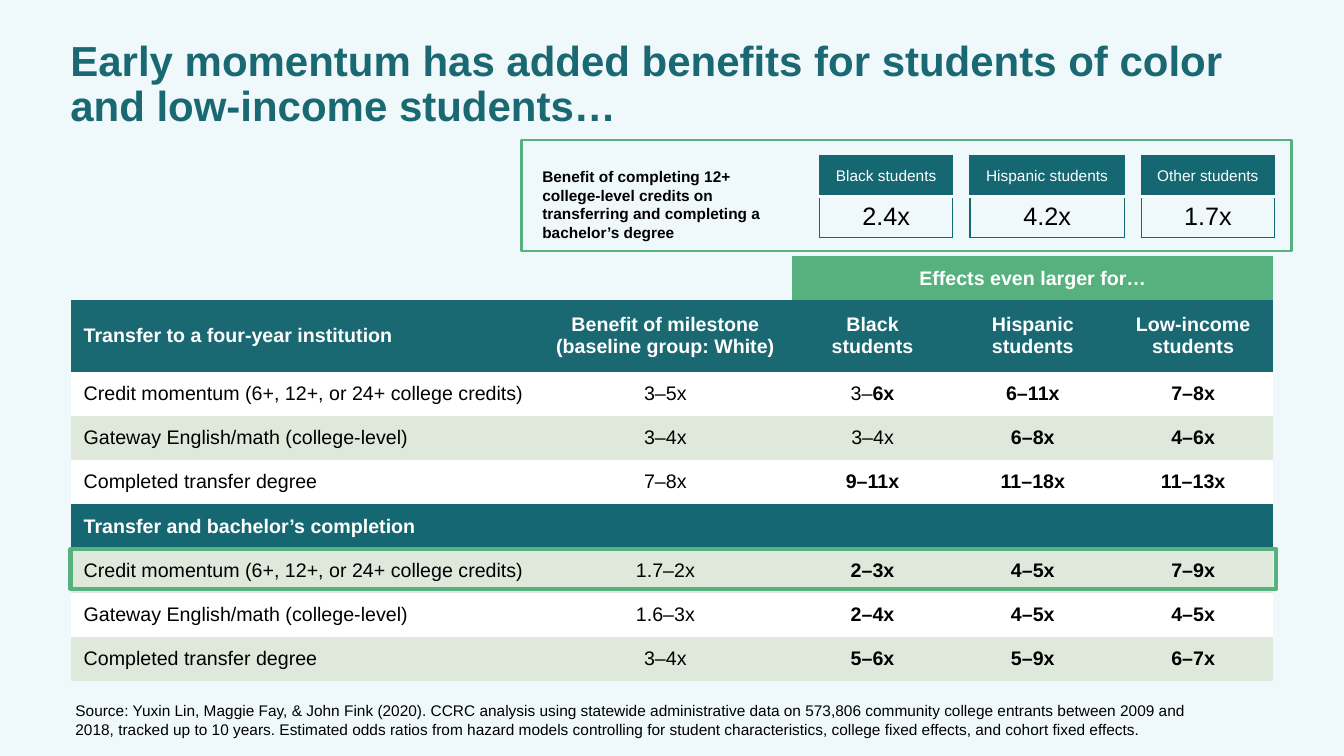
import pptx
import pptx.util
import pptx.dml.color
import pptx.enum.shapes
import pptx.enum.text
import pptx.oxml
from pptx.oxml.ns import nsdecls

Inches = pptx.util.Inches
Pt = pptx.util.Pt
RGBColor = pptx.dml.color.RGBColor
CENTER = pptx.enum.text.PP_ALIGN.CENTER
LEFT = pptx.enum.text.PP_ALIGN.LEFT
COLORS = {
    "background": "EFF8FA", "title": "196872", "teal": "156872", "green": "56B17E",
    "band": "DEE9DC", "white": "FFFFFF", "black": "000000",
}
PLAIN_TABLE_STYLE = "{2D5ABB26-0587-4C30-8999-92F81FD0307C}"


def write_text(frame, text, size=14, color="black", bold=False, align=LEFT, spacing=None):
    """Write one paragraph; everything after a "|" in the text is bold."""
    frame.word_wrap = True
    paragraph = frame.paragraphs[0]
    paragraph.alignment = align
    if spacing:
        paragraph.line_spacing = spacing
    for position, part in enumerate(text.split("|")):
        if part:
            run = paragraph.add_run()
            run.text = part
            run.font.name = "Arial"
            run.font.size = Pt(size)
            run.font.bold = bold or position > 0
            run.font.color.rgb = RGBColor.from_string(COLORS[color])


def add_plain_table(left, top, widths, heights):
    """Add a table without banding or grid, its cells anchored in the middle."""
    table = slide.shapes.add_table(
        len(heights), len(widths), Inches(left), Inches(top),
        Inches(sum(widths)), Inches(sum(heights))).table
    table.first_row = table.horz_banding = False
    table._tbl.tblPr[0].text = PLAIN_TABLE_STYLE
    for column, width in zip(table.columns, widths):
        column.width = Inches(width)
    for row, height in zip(table.rows, heights):
        row.height = Inches(height)
    for cell in table.iter_cells():
        cell.vertical_anchor = pptx.enum.text.MSO_ANCHOR.MIDDLE
    return table


presentation = pptx.Presentation()
presentation.slide_width = Inches(13.33)
presentation.slide_height = Inches(7.5)
slide = presentation.slides.add_slide(presentation.slide_layouts[6])
slide.background.fill.solid()
slide.background.fill.fore_color.rgb = RGBColor.from_string(COLORS["background"])

# Title, source line and the label of the callout
texts = [
    ((0.6, 0.35, 12.03, 1.45),
     "Early momentum has added benefits for students of color and low-income students…",
     dict(size=30, color="title", bold=True, spacing=0.9)),
    ((0.65, 6.91, 11.63, 0.47),
     "Source: Yuxin Lin, Maggie Fay, & John Fink (2020). CCRC analysis using statewide "
     "administrative data on 573,806 community college entrants between 2009 and 2018, "
     "tracked up to 10 years. Estimated odds ratios from hazard models controlling for "
     "student characteristics, college fixed effects, and cohort fixed effects.",
     dict(size=11)),
    ((5.28, 1.61, 2.68, 0.66),
     "Benefit of completing 12+ college-level credits on transferring and completing "
     "a bachelor’s degree",
     dict(size=11, bold=True)),
]
for place, text, text_format in texts:
    text_box = slide.shapes.add_textbox(*map(Inches, place))
    write_text(text_box.text_frame, text, **text_format)

# Main table: kind of row, then its cells
effects_rows = [
    ("effects", ["", "", "Effects even larger for…", "", ""]),
    ("header", ["Transfer to a four-year institution",
                "Benefit of milestone (baseline group: White)",
                "Black students", "Hispanic students", "Low-income students"]),
    ("white", ["Credit momentum (6+, 12+, or 24+ college credits)",
               "3–5x", "3–|6x", "|6–11x", "|7–8x"]),
    ("band", ["Gateway English/math (college-level)", "3–4x", "3–4x", "|6–8x", "|4–6x"]),
    ("white", ["Completed transfer degree", "7–8x", "|9–11x", "|11–18x", "|11–13x"]),
    ("section", ["Transfer and bachelor’s completion", "", "", "", ""]),
    ("band", ["Credit momentum (6+, 12+, or 24+ college credits)",
              "1.7–2x", "|2–3x", "|4–5x", "|7–9x"]),
    ("white", ["Gateway English/math (college-level)", "1.6–3x", "|2–4x", "|4–5x", "|4–5x"]),
    ("band", ["Completed transfer degree", "3–4x", "|5–6x", "|5–9x", "|6–7x"]),
]
row_fills = {"effects": "green", "header": "title", "section": "teal",
             "white": "white", "band": "band"}
table_height, header_height = 4.21, 0.71
row_height = (table_height - header_height) / (len(effects_rows) - 1)
effects_table = add_plain_table(
    0.7, 2.54, [4.64, 2.52, 1.59, 1.59, 1.59],
    [header_height if kind == "header" else row_height for kind, _ in effects_rows])
effects_table.cell(0, 2).merge(effects_table.cell(0, 4))
for row, (kind, values) in enumerate(effects_rows):
    heading = kind in ("effects", "header", "section")
    for column, value in enumerate(values):
        cell = effects_table.cell(row, column)
        cell.margin_left = cell.margin_right = Inches(0.13)
        cell.margin_top = cell.margin_bottom = Inches(0.07)
        if kind != "effects" or column >= 2:
            cell.fill.solid()
            cell.fill.fore_color.rgb = RGBColor.from_string(COLORS[row_fills[kind]])
        write_text(cell.text_frame, value, bold=heading,
                   color="white" if heading else "black",
                   align=CENTER if column else LEFT)

# Small cards of the callout
for left, width, group, benefit in [
    (8.13, 1.32, "Black students", "2.4x"),
    (9.62, 1.53, "Hispanic students", "4.2x"),
    (11.32, 1.32, "Other students", "1.7x"),
]:
    card = add_plain_table(left, 1.54, [width], [0.41, 0.41])
    group_cell, benefit_cell = card.cell(0, 0), card.cell(1, 0)
    write_text(group_cell.text_frame, group, size=11, color="white", align=CENTER)
    write_text(benefit_cell.text_frame, benefit, size=18, align=CENTER)
    for cell, top_color, bottom_color, bottom_width in [
        (group_cell, "teal", "white", 3), (benefit_cell, "white", "teal", 1),
    ]:
        borders = [("lnL", "teal", 1), ("lnR", "teal", 1),
                   ("lnT", top_color, 1), ("lnB", bottom_color, bottom_width)]
        for side, color, points in borders:
            cell._tc.get_or_add_tcPr().append(pptx.oxml.parse_xml(
                f'<a:{side} {nsdecls("a")} w="{Pt(points)}"><a:solidFill>'
                f'<a:srgbClr val="{COLORS[color]}"/></a:solidFill></a:{side}>'))
    group_cell.fill.solid()
    group_cell.fill.fore_color.rgb = RGBColor.from_string(COLORS["teal"])

# Green frames around the highlighted row and the callout
for place, points in [((0.7, 5.45, 11.96, 0.39), 3), ((5.17, 1.39, 7.64, 1.1), 2)]:
    frame = slide.shapes.add_shape(
        pptx.enum.shapes.MSO_SHAPE.RECTANGLE, *map(Inches, place))
    frame.shadow.inherit = False
    frame.fill.background()
    frame.line.color.rgb = RGBColor.from_string(COLORS["green"])
    frame.line.width = Pt(points)

presentation.save("out.pptx")
